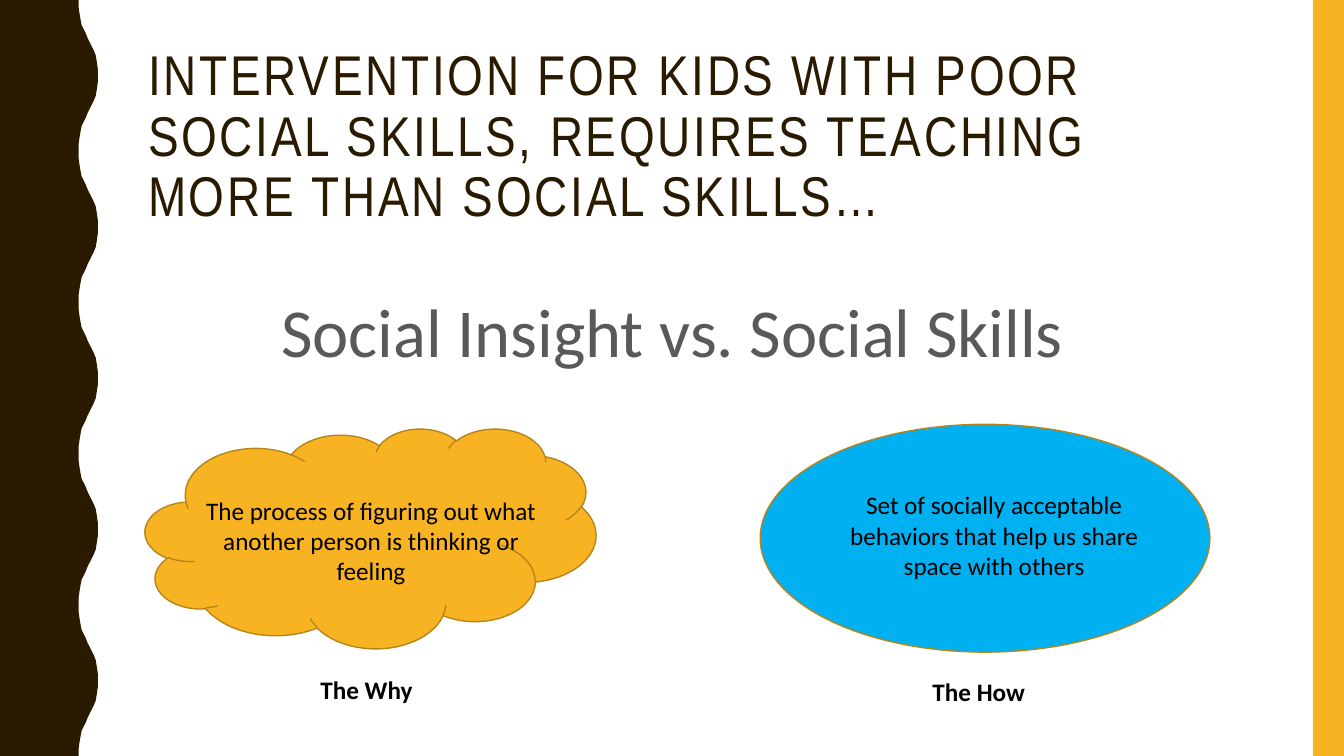
from pptx import Presentation
from pptx.dml.color import RGBColor
from pptx.enum import shapes, text
from pptx.util import Inches, Pt

COLORS = {"brown": "2A1A00", "gold": "F8B323", "outline": "B7841A",
          "blue": "00B0F0", "gray": "595959", "black": "000000"}

presentation = Presentation()
presentation.slide_width = Inches(13.33)
presentation.slide_height = Inches(7.5)
slide = presentation.slides.add_slide(presentation.slide_layouts[6])


def paint(shape, fill, line=None):
    shape.shadow.inherit = False
    shape.fill.solid()
    shape.fill.fore_color.rgb = RGBColor.from_string(COLORS[fill])
    if line:
        shape.line.color.rgb = RGBColor.from_string(COLORS[line])
        shape.line.width = Pt(1)
    else:
        shape.line.fill.background()


def add_text(words, box, size, color="black", font="Calibri", bold=False,
             align=text.PP_ALIGN.LEFT, line_spacing=None, tracking=None,
             right_inset=0.1):
    shape = slide.shapes.add_textbox(*[Inches(value) for value in box])
    frame = shape.text_frame
    frame.word_wrap = True
    frame.margin_right = Inches(right_inset)
    paragraph = frame.paragraphs[0]
    paragraph.alignment = align
    if line_spacing:
        paragraph.line_spacing = line_spacing
    run = paragraph.add_run()
    run.text = words
    run.font.name = font
    run.font.size = Pt(size)
    run.font.bold = bold
    run.font.color.rgb = RGBColor.from_string(COLORS[color])
    if tracking:
        run._r.get_or_add_rPr().set("spc", str(tracking * 100))


# Wavy left band: half a wave, mirrored and repeated down the slide
WAVE_LEFT, WAVE_HEIGHT = 0.78, 1.5
half_wave = [(0, 0), (0, 0.07), (0.01, 0.14), (0.02, 0.2), (0.03, 0.25),
             (0.05, 0.29), (0.07, 0.33), (0.09, 0.38), (0.11, 0.42),
             (0.13, 0.46), (0.15, 0.5), (0.17, 0.55), (0.18, 0.61),
             (0.19, 0.68), (0.19, 0.75)]
wave = half_wave + [(x, WAVE_HEIGHT - y) for x, y in half_wave[-2::-1]]
edge = [(Inches(WAVE_LEFT + x), Inches(number * WAVE_HEIGHT + y))
        for number in range(5) for x, y in wave]
builder = slide.shapes.build_freeform(0, 0)
builder.add_line_segments(edge + [(0, Inches(7.5))], close=True)
paint(builder.convert_to_shape(), "brown")

# Right band, ellipse and cloud
for kind, box, fill, line in [
    (shapes.MSO_SHAPE.RECTANGLE, (13.02, 0, 0.31, 7.5), "gold", None),
    (shapes.MSO_SHAPE.OVAL, (7.54, 4.21, 4.46, 2.26), "blue", "outline"),
    (shapes.MSO_SHAPE.CLOUD, (1.44, 4.25, 4.47, 2.18), "gold", "outline"),
]:
    shape = slide.shapes.add_shape(kind, *[Inches(value) for value in box])
    paint(shape, fill, line)

# Title and subtitle
add_text("INTERVENTION FOR KIDS WITH POOR SOCIAL SKILLS, REQUIRES TEACHING "
         "MORE THAN SOCIAL SKILLS…", (1.37, 0.42, 11.13, 1.63), 40,
         color="brown", font="Arial Narrow", line_spacing=0.9, tracking=2,
         right_inset=0.3)
add_text("Social Insight vs. Social Skills", (2.44, 2.91, 8.45, 1.35), 49,
         color="gray", align=text.PP_ALIGN.CENTER, line_spacing=0.9)

# Definitions and their labels
for words, box in [
    ("The process of figuring out what another person is thinking or feeling",
     (1.92, 4.86, 3.52, 1.01)),
    ("Set of socially acceptable behaviors that help us share space with others",
     (8.1, 4.81, 3.52, 1.01)),
]:
    add_text(words, box, 18, align=text.PP_ALIGN.CENTER)
add_text("The Why", (3.08, 6.64, 1.46, 0.4), 18, bold=True)
add_text("The How", (9.15, 6.66, 1.43, 0.4), 18, bold=True)

presentation.save("out.pptx")
